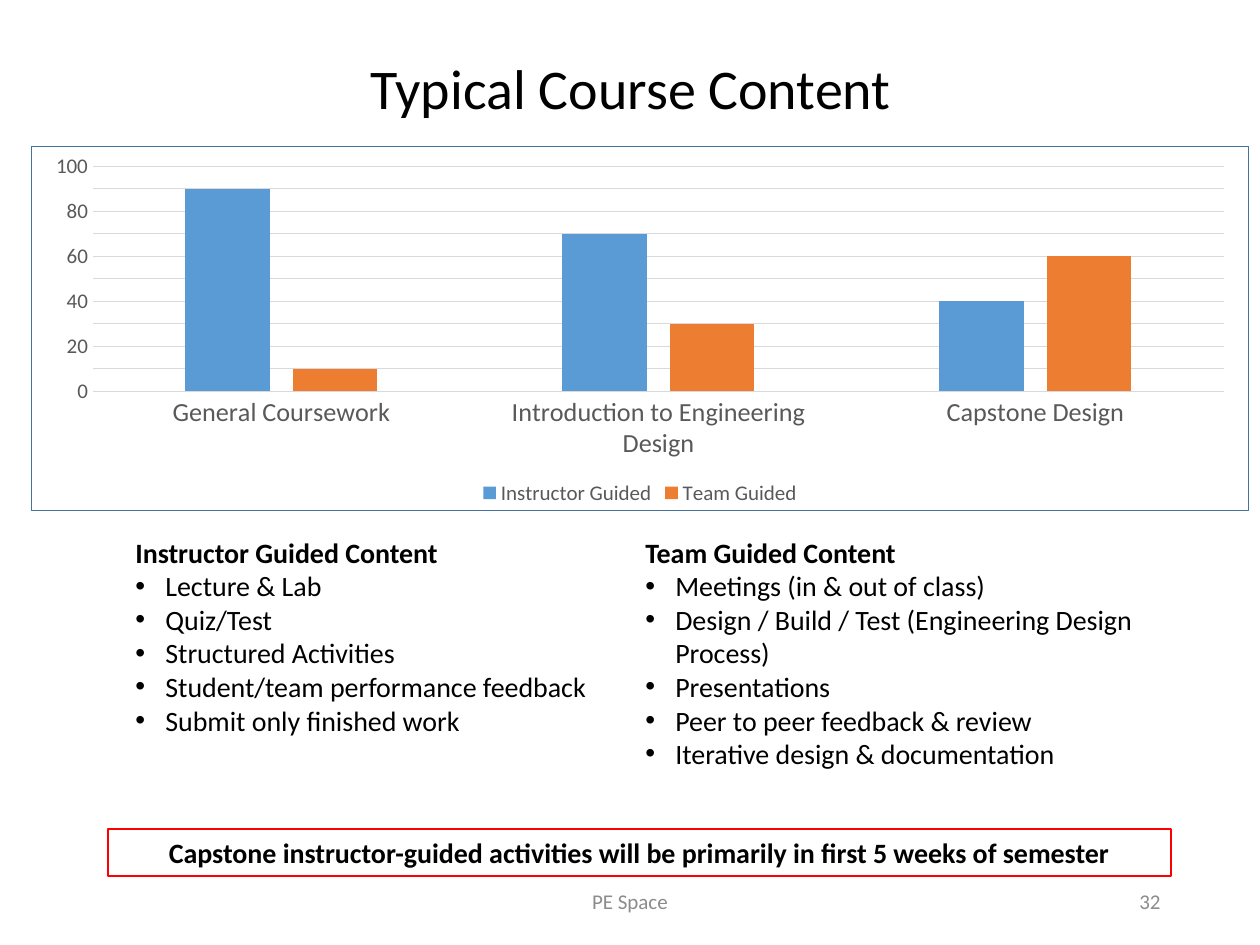
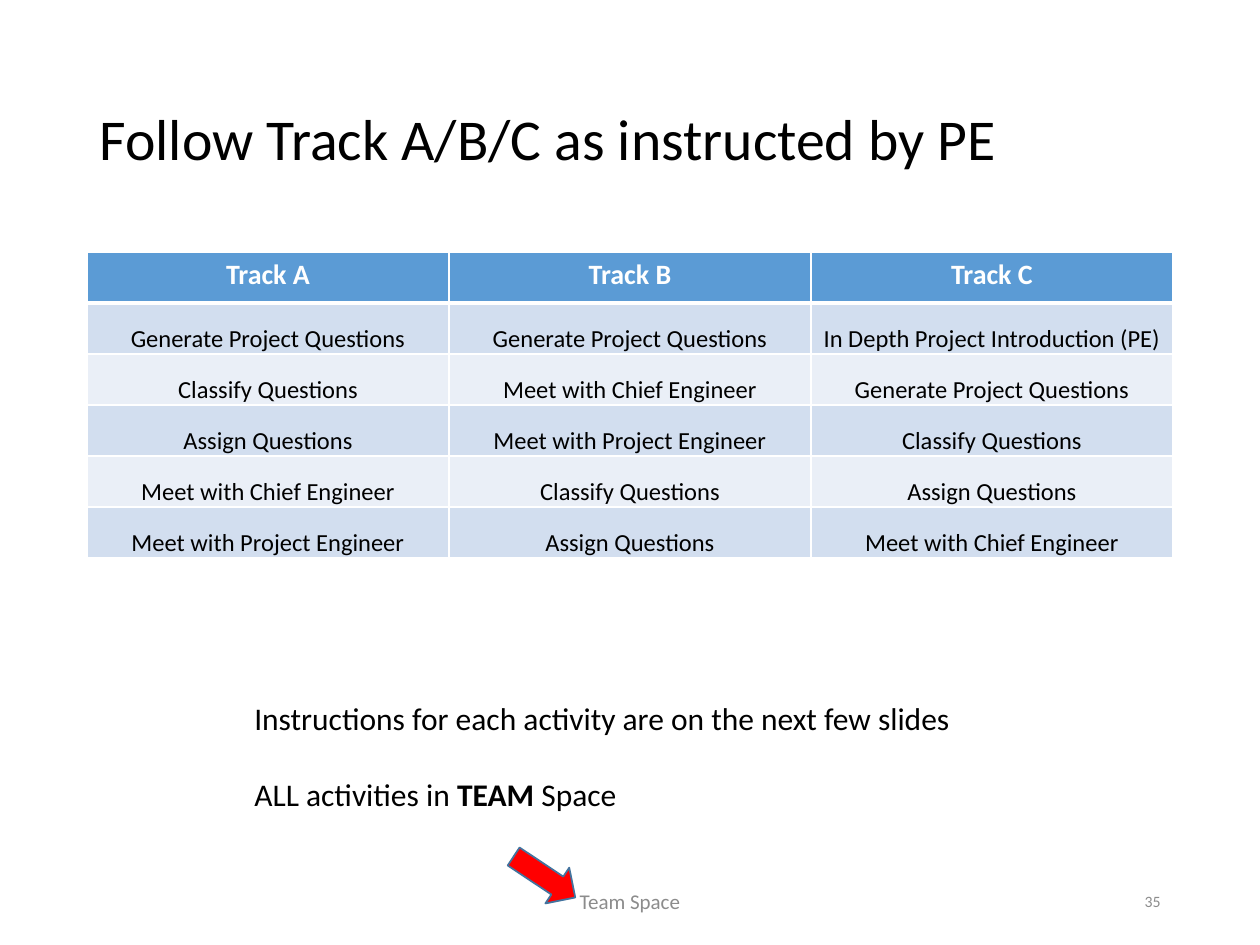
import pptx
import pptx.chart.data
import pptx.dml.color
import pptx.enum.chart
import pptx.enum.shapes
import pptx.enum.text
import pptx.oxml
import pptx.oxml.ns
import pptx.util

RGBColor = pptx.dml.color.RGBColor
ALIGN = pptx.enum.text.PP_ALIGN
ANCHOR = pptx.enum.text.MSO_ANCHOR
AUTO_SIZE = pptx.enum.text.MSO_AUTO_SIZE
TICK_MARK = pptx.enum.chart.XL_TICK_MARK
Pt = pptx.util.Pt

BLACK = RGBColor(0x00, 0x00, 0x00)
WHITE = RGBColor(0xFF, 0xFF, 0xFF)
RED = RGBColor(0xFF, 0x00, 0x00)
BLUE = RGBColor(0x5B, 0x9B, 0xD5)
DARK_BLUE = RGBColor(0x43, 0x73, 0x9E)
ORANGE = RGBColor(0xED, 0x7D, 0x31)
FOOTER_GRAY = RGBColor(0x8C, 0x8C, 0x8C)
LABEL_GRAY = RGBColor(0x59, 0x59, 0x59)
GRID_GRAY = RGBColor(0xD9, 0xD9, 0xD9)
BANDS = [RGBColor(0xD2, 0xDE, 0xEF), RGBColor(0xEA, 0xEF, 0xF7)]

FONT = "Calibri"
PX = 914400 / 126
TITLE_ONLY = 5
LINE_XML = (
    '<a:{tag} xmlns:a="http://schemas.openxmlformats.org/drawingml/2006/main" w="{width}">'
    '<a:solidFill><a:srgbClr val="{color}"/></a:solidFill></a:{tag}>'
)


def px(*lengths):
    return [round(length * PX) for length in lengths]


def write_text(frame, paragraphs, size, color=BLACK, alignment=ALIGN.LEFT, **frame_format):
    for name, value in {"word_wrap": True, **frame_format}.items():
        setattr(frame, name, value)
    for index, runs in enumerate(paragraphs):
        paragraph = frame.add_paragraph() if index else frame.paragraphs[0]
        paragraph.alignment = alignment
        for text, bold in runs:
            run = paragraph.add_run()
            run.text = text
            for name, value in {"name": FONT, "size": Pt(size), "bold": bold}.items():
                setattr(run.font, name, value)
            run.font.color.rgb = color
    return frame


presentation = pptx.Presentation()
presentation.slide_width, presentation.slide_height = px(1260, 945)

SLIDES = [
    {
        "title": "Typical Course Content",
        "box": (300, 47, 662, 118),
        "size": 32,
        "alignment": ALIGN.CENTER,
        "anchor": ANCHOR.TOP,
        "spacing": 1.0,
        "footer": "PE Space",
        "number": "32",
        "number_size": 12,
    },
    {
        "title": "Follow Track A/B/C as instructed by PE",
        "box": (87, 50, 1086, 183),
        "size": 33,
        "alignment": ALIGN.LEFT,
        "anchor": ANCHOR.MIDDLE,
        "spacing": 0.9,
        "footer": "Team Space",
        "number": "35",
        "number_size": 9,
    },
]

slides = []
for content in SLIDES:
    slide = presentation.slides.add_slide(presentation.slide_layouts[TITLE_ONLY])
    slides.append(slide)
    title = slide.shapes.title
    title.left, title.top, title.width, title.height = px(*content["box"])
    frame = write_text(
        title.text_frame, [[(content["title"], False)]], content["size"],
        alignment=content["alignment"], vertical_anchor=content["anchor"],
        auto_size=AUTO_SIZE.NONE,
    )
    frame.paragraphs[0].line_spacing = content["spacing"]
    for text, left, width, size, alignment in [
        (content["footer"], 417, 426, 12, ALIGN.CENTER),
        (content["number"], 890, 283, content["number_size"], ALIGN.RIGHT),
    ]:
        footer = slide.shapes.add_textbox(*px(left, 876, width, 50))
        write_text(footer.text_frame, [[(text, False)]], size, FOOTER_GRAY, alignment,
                   vertical_anchor=ANCHOR.MIDDLE)

content_slide, track_slide = slides

chart_data = pptx.chart.data.CategoryChartData()
chart_data.categories = [
    "General Coursework", "Introduction to Engineering Design", "Capstone Design",
]
chart_data.add_series("Instructor Guided", [90, 70, 40])
chart_data.add_series("Team Guided", [10, 30, 60])
chart = content_slide.shapes.add_chart(
    pptx.enum.chart.XL_CHART_TYPE.COLUMN_CLUSTERED, *px(31, 146, 1218, 365), chart_data
).chart
chart.has_title = False
chart.has_legend = True
chart.legend.position = pptx.enum.chart.XL_LEGEND_POSITION.BOTTOM
chart.legend.include_in_layout = False

category_axis, value_axis = chart.category_axis, chart.value_axis
for font, size, color in [
    (chart.font, 10, BLACK),
    (category_axis.tick_labels.font, 15, LABEL_GRAY),
    (value_axis.tick_labels.font, 12, LABEL_GRAY),
    (chart.legend.font, 12, LABEL_GRAY),
]:
    for name, value in {"name": FONT, "size": Pt(size), "bold": False}.items():
        setattr(font, name, value)
    font.color.rgb = color
for axis in (category_axis, value_axis):
    axis.major_tick_mark = TICK_MARK.NONE
    axis.minor_tick_mark = TICK_MARK.NONE
for name, value in {"minimum_scale": 0, "maximum_scale": 100, "major_unit": 10}.items():
    setattr(value_axis, name, value)
for line in (category_axis.format.line, value_axis.major_gridlines.format.line):
    line.color.rgb = GRID_GRAY
    line.width = Pt(0.75)
value_axis.format.line.fill.background()

plot = chart.plots[0]
for name, value in {"gap_width": 219, "overlap": -27, "vary_by_categories": False}.items():
    setattr(plot, name, value)
for series, color in zip(plot.series, (BLUE, ORANGE)):
    series.format.fill.solid()
    series.format.fill.fore_color.rgb = color

chart_border = pptx.oxml.parse_xml(
    '<c:spPr xmlns:c="http://schemas.openxmlformats.org/drawingml/2006/chart">'
    + LINE_XML.format(tag="ln", width=Pt(0.75), color=DARK_BLUE)
    + "</c:spPr>"
)
chart.element.find(pptx.oxml.ns.qn("c:chart")).addnext(chart_border)

GUIDED_CONTENT = [
    (123, 493, "Instructor Guided Content", [
        "Lecture & Lab",
        "Quiz/Test",
        "Structured Activities",
        "Student/team performance feedback",
        "Submit only finished work",
    ]),
    (633, 528, "Team Guided Content", [
        "Meetings (in & out of class)",
        "Design / Build / Test (Engineering Design Process)",
        "Presentations",
        "Peer to peer feedback & review",
        "Iterative design & documentation",
    ]),
]
indent = px(30)[0]
for left, width, heading, items in GUIDED_CONTENT:
    column = content_slide.shapes.add_textbox(*px(left, 529, width, 251))
    frame = write_text(
        column.text_frame, [[(heading, True)]] + [[(item, False)] for item in items], 16,
        auto_size=AUTO_SIZE.SHAPE_TO_FIT_TEXT,
    )
    for paragraph in frame.paragraphs[1:]:
        properties = paragraph._p.get_or_add_pPr()
        properties.set("marL", str(indent))
        properties.set("indent", str(-indent))
        for tag, name, value in [("a:buFont", "typeface", "Arial"), ("a:buChar", "char", "•")]:
            bullet = pptx.oxml.parse_xml(
                f'<{tag} xmlns:a="http://schemas.openxmlformats.org/drawingml/2006/main" '
                f'{name}="{value}"/>'
            )
            properties.append(bullet)

callout = content_slide.shapes.add_textbox(*px(108, 829, 1063, 47))
callout.line.color.rgb = RED
callout.line.width = Pt(0.75)
write_text(
    callout.text_frame,
    [[("Capstone instructor-guided activities will be primarily in first 5 weeks of semester", True)]],
    16, alignment=ALIGN.CENTER, auto_size=AUTO_SIZE.SHAPE_TO_FIT_TEXT,
)

TRACKS = [
    ["Track A", "Track B", "Track C"],
    ["Generate Project Questions", "Generate Project Questions", "In Depth Project Introduction (PE)"],
    ["Classify Questions", "Meet with Chief Engineer", "Generate Project Questions"],
    ["Assign Questions", "Meet with Project Engineer", "Classify Questions"],
    ["Meet with Chief Engineer", "Classify Questions", "Assign Questions"],
    ["Meet with Project Engineer", "Assign Questions", "Meet with Chief Engineer"],
]
table = track_slide.shapes.add_table(6, 3, *px(87, 252, 1086, 306)).table
body_margins = dict(zip(
    ("margin_left", "margin_right", "margin_top", "margin_bottom"), px(1, 1, 1, 0)
))
for row_index, labels in enumerate(TRACKS):
    is_header = row_index == 0
    for column_index, label in enumerate(labels):
        cell = table.cell(row_index, column_index)
        cell.fill.solid()
        cell.fill.fore_color.rgb = BLUE if is_header else BANDS[(row_index - 1) % 2]
        if not is_header:
            cell.vertical_anchor = ANCHOR.BOTTOM
            for name, value in body_margins.items():
                setattr(cell, name, value)
        write_text(cell.text_frame, [[(label, is_header)]], 16 if is_header else 14,
                   WHITE if is_header else BLACK, ALIGN.CENTER)
        for position, tag in enumerate(("lnL", "lnR", "lnT", "lnB")):
            is_thick = (row_index, tag) in [(0, "lnB"), (1, "lnT")]
            border = LINE_XML.format(tag=tag, width=Pt(3 if is_thick else 1), color=WHITE)
            cell._tc.get_or_add_tcPr().insert(position, pptx.oxml.parse_xml(border))

instructions = track_slide.shapes.add_textbox(*px(242, 693, 745, 127))
frame = write_text(
    instructions.text_frame,
    [
        [("Instructions for each activity are on the next few slides", False)],
        [("ALL activities in ", False), ("TEAM", True), (" Space", False)],
    ],
    18, word_wrap=False, auto_size=AUTO_SIZE.SHAPE_TO_FIT_TEXT,
)
frame.paragraphs[1].space_before = Pt(22)

footer_arrow = track_slide.shapes.add_shape(
    pptx.enum.shapes.MSO_SHAPE.DOWN_ARROW, *px(523, 840, 43, 74)
)
footer_arrow.rotation = 303.6
footer_arrow.shadow.inherit = False
footer_arrow.fill.solid()
footer_arrow.fill.fore_color.rgb = RED
footer_arrow.line.color.rgb = DARK_BLUE
footer_arrow.line.width = Pt(1)

presentation.save("out.pptx")
